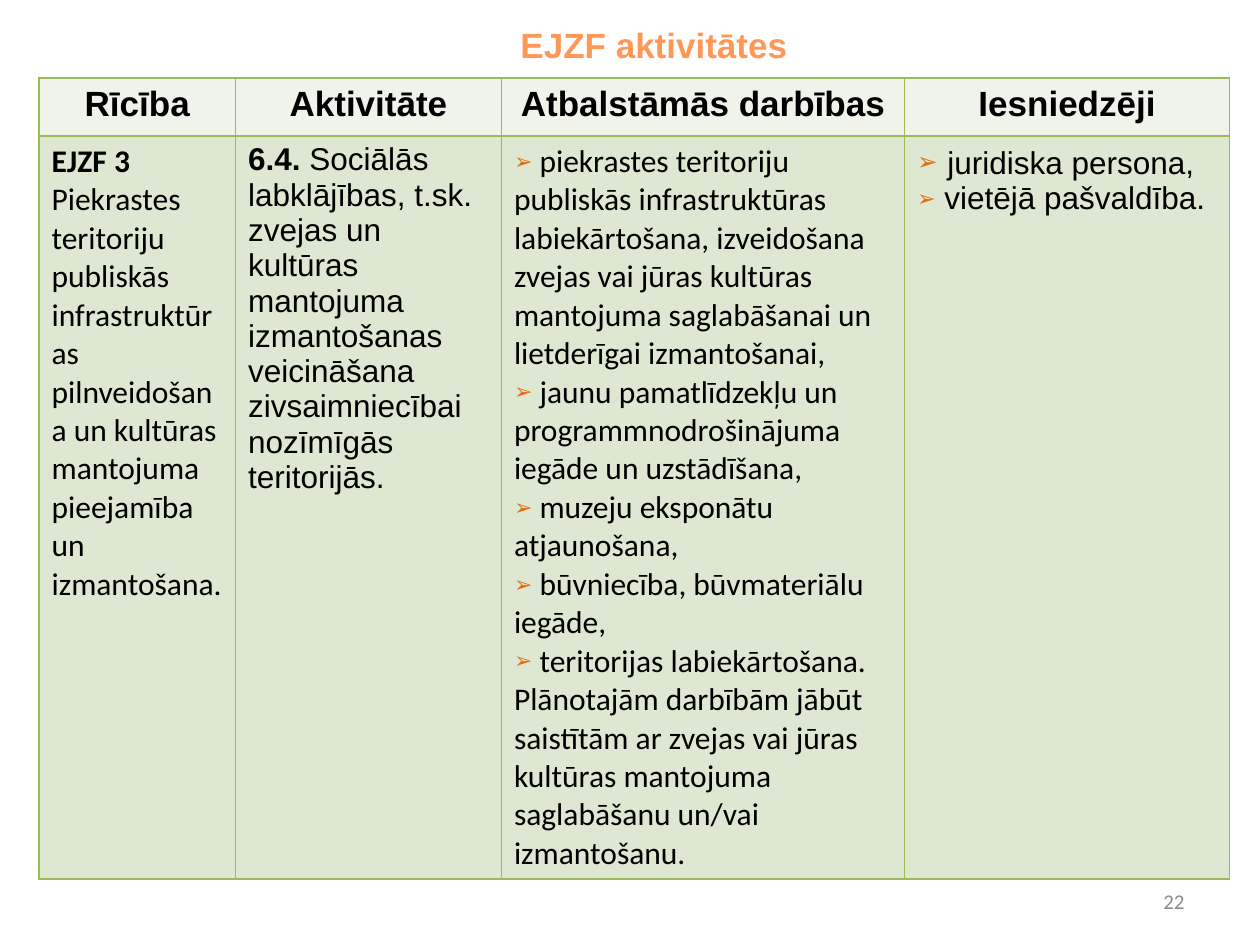
from lxml import etree
from pptx import Presentation
from pptx.dml.color import RGBColor
from pptx.enum.text import MSO_ANCHOR, PP_ALIGN
from pptx.oxml.ns import qn
from pptx.util import Inches, Pt

LEFT, CENTER, RIGHT = PP_ALIGN.LEFT, PP_ALIGN.CENTER, PP_ALIGN.RIGHT
MIDDLE = MSO_ANCHOR.MIDDLE
ARIAL, BODY = "Arial", "Calibri"
BLACK, ORANGE, GREEN = "000000", "E46C0A", "9BBB59"
HEAD, PALE = "EFF3EA", "DEE7D1"

WIDTHS = [1.56, 2.11, 3.2, 2.58]
HEIGHTS = [0.46, 5.4]
HEADS = ["Rīcība", "Aktivitāte", "Atbalstāmās darbības", "Iesniedzēji"]
ACTION = [
    ("EJZF 3 ", 18, BODY, True),
    ("Piekrastes teritoriju publiskās infrastruktūras pilnveidošana un "
     "kultūras mantojuma pieejamība un izmantošana.", 18, BODY),
]
ACTIVITY = [
    ("6.4. ", 18, ARIAL, True),
    ("Sociālās labklājības, t.sk. zvejas un kultūras mantojuma izmantošanas "
     "veicināšana zivsaimniecībai nozīmīgās teritorijās.", 18, ARIAL),
]
WORKS = [
    " piekrastes teritoriju publiskās infrastruktūras labiekārtošana, "
    "izveidošana zvejas vai jūras kultūras mantojuma saglabāšanai un "
    "lietderīgai izmantošanai,",
    " jaunu pamatlīdzekļu un programmnodrošinājuma iegāde un uzstādīšana,",
    " muzeju eksponātu atjaunošana,",
    " būvniecība, būvmateriālu iegāde,",
    " teritorijas labiekārtošana. Plānotajām darbībām jābūt saistītām ar "
    "zvejas vai jūras kultūras mantojuma saglabāšanu un/vai izmantošanu.",
]
BIDDERS = [
    [(" ", 20, ARIAL), ("juridiska persona,", 18, ARIAL)],
    [(" vietējā pašvaldība.", 18, ARIAL)],
]


def color(code):
    return RGBColor.from_string(code)


def add(parent, tag, **attrs):
    return etree.SubElement(parent, qn(tag), attrs)


class Deck:
    def __init__(self):
        self.prs = Presentation()
        self.prs.slide_width = Inches(10)
        self.prs.slide_height = Inches(7.5)
        self.slide = self.prs.slides.add_slide(self.prs.slide_layouts[5])

    def text(self, frame, paras, align=LEFT, tint=BLACK, bullet=False):
        """Fill a frame; a run is (text, size, font[, bold])."""
        frame.word_wrap = True
        for i, runs in enumerate(paras):
            para = frame.paragraphs[0] if i == 0 else frame.add_paragraph()
            para.alignment = align
            if bullet:
                self.mark(para)
            for words, size, face, *bold in runs:
                run = para.add_run()
                run.text = words
                font = run.font
                font.size, font.name, font.bold = Pt(size), face, bool(bold)
                font.color.rgb = color(tint)

    def mark(self, para):
        """Give a paragraph an orange arrow bullet."""
        props = para._p.get_or_add_pPr()
        props.set("marL", "0")
        props.set("indent", "0")
        add(add(props, "a:buClr"), "a:srgbClr", val=ORANGE)
        add(props, "a:buSzPct", val="70000")
        add(props, "a:buFont", typeface=ARIAL)
        add(props, "a:buChar", char="➢")

    def title(self, words, x, y, w, h):
        shape = self.slide.shapes.title
        shape.left, shape.top = Inches(x), Inches(y)
        shape.width, shape.height = Inches(w), Inches(h)
        shape.text_frame.vertical_anchor = MIDDLE
        self.text(shape.text_frame, [[(words, 20, ARIAL, True)]], CENTER, "FF9856")

    def label(self, words, x, y, w, h):
        box = self.slide.shapes.add_textbox(Inches(x), Inches(y), Inches(w), Inches(h))
        box.text_frame.vertical_anchor = MIDDLE
        self.text(box.text_frame, [[(words, 12, BODY)]], RIGHT, "8C8C8C")

    def table(self, x, y, widths, heights):
        grid = self.slide.shapes.add_table(
            len(heights), len(widths), Inches(x), Inches(y),
            Inches(sum(widths)), Inches(sum(heights))).table
        grid.first_row = grid.horz_banding = False
        for col, width in zip(grid.columns, widths):
            col.width = Inches(width)
        for row, height in zip(grid.rows, heights):
            row.height = Inches(height)
        return grid

    def cell(self, cell, paras, fill, align=LEFT, bullet=False):
        self.text(cell.text_frame, paras, align, bullet=bullet)
        props = cell._tc.get_or_add_tcPr()
        for side in ("a:lnL", "a:lnR", "a:lnT", "a:lnB"):
            line = add(props, side, w=str(Pt(1)))
            add(add(line, "a:solidFill"), "a:srgbClr", val=GREEN)
        cell.fill.solid()
        cell.fill.fore_color.rgb = color(fill)


def main():
    deck = Deck()
    deck.title("EJZF aktivitātes", 0.94, 0.16, 8.5, 0.39)
    grid = deck.table(0.31, 0.62, WIDTHS, HEIGHTS)
    for i, head in enumerate(HEADS):
        deck.cell(grid.cell(0, i), [[(head, 20, ARIAL, True)]], HEAD, CENTER)
    works = [[(item, 18, BODY)] for item in WORKS]
    for i, paras in enumerate([[ACTION], [ACTIVITY], works, BIDDERS]):
        deck.cell(grid.cell(1, i), paras, PALE, bullet=i > 1)
    deck.label("22", 7.17, 6.95, 2.33, 0.4)
    deck.prs.save("out.pptx")


if __name__ == "__main__":
    main()
